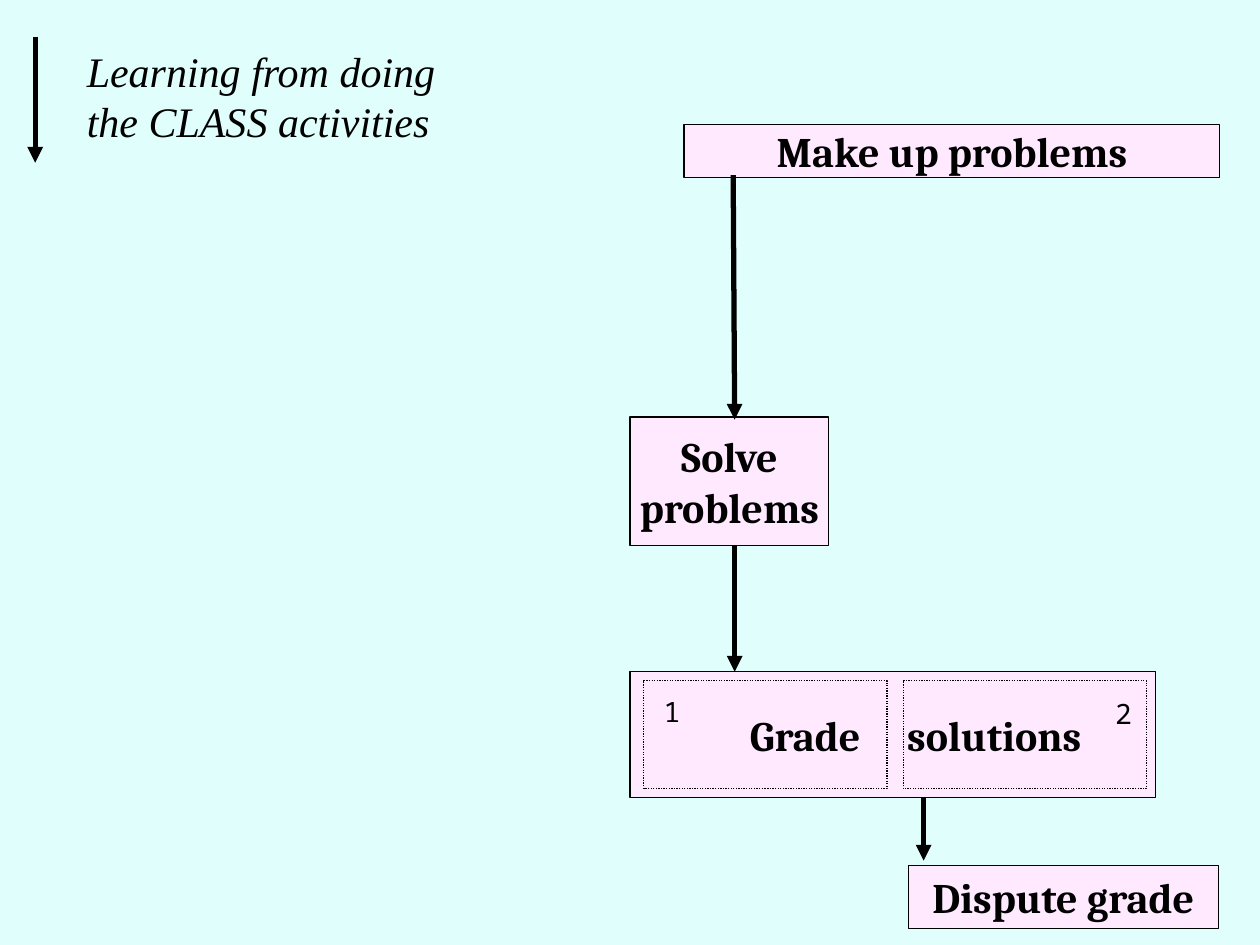
from lxml import etree
from pptx import Presentation
from pptx import util as u
from pptx.dml.color import RGBColor
from pptx.enum import dml, shapes, text
from pptx.oxml.ns import qn

PINK = "FFE9FF"
BLACK = "000000"


def colour(value):
    """Turn a hex string into a colour."""
    return RGBColor.from_string(value)


def lengths(*values):
    """Turn centimetres into lengths."""
    return [u.Cm(value) for value in values]


def add_span(para, words, size, font, bold=False, italic=False):
    """Add one formatted run to a paragraph."""
    span = para.add_run()
    span.text = words
    span.font.size = u.Pt(size)
    span.font.name = font
    span.font.bold = bold
    span.font.italic = italic
    span.font.color.rgb = colour(BLACK)


def add_box(page, place, fill=None, dash=None):
    """Add a thinly outlined rectangle."""
    box = page.shapes.add_shape(shapes.MSO_SHAPE.RECTANGLE, *lengths(*place))
    box.shadow.inherit = False
    if fill:
        box.fill.solid()
        box.fill.fore_color.rgb = colour(fill)
    else:
        box.fill.background()
    box.line.color.rgb = colour(BLACK)
    box.line.width = u.Pt(0.75)
    if dash:
        box.line.dash_style = dash
    return box


def add_step(page, place, lines):
    """Add a pink step box with centred bold lines."""
    box = add_box(page, place, PINK)
    frame = box.text_frame
    frame.word_wrap = False
    frame.vertical_anchor = text.MSO_ANCHOR.MIDDLE
    for index, words in enumerate(lines):
        para = frame.add_paragraph() if index else frame.paragraphs[0]
        para.alignment = text.PP_ALIGN.CENTER
        add_span(para, words, 24, "Cambria", bold=True)
    return box


def add_label(page, place, words, size, font, italic=False):
    """Add a wrapping text box."""
    box = page.shapes.add_textbox(*lengths(*place))
    box.text_frame.word_wrap = True
    add_span(box.text_frame.paragraphs[0], words, size, font, italic=italic)


def add_arrow(page, start, end):
    """Add a thick line with an arrowhead at its end."""
    arrow = page.shapes.add_connector(
        shapes.MSO_CONNECTOR.STRAIGHT, *lengths(*start, *end))
    arrow.line.color.rgb = colour(BLACK)
    arrow.line.width = u.Pt(3)
    etree.SubElement(arrow.line._get_or_add_ln(), qn("a:tailEnd"), type="triangle")
    etree.SubElement(arrow._element.spPr, qn("a:effectLst"))


def add_legend(page, left, top):
    """Add the key that explains the arrows."""
    add_arrow(page, (left, top), (left, top + 2.54))
    add_label(page, (left + 0.79, top + 0.05, 7.57, 2.31),
              "Learning from doing the CLASS activities", 24,
              "Times New Roman", italic=True)


def add_grading(page, left, top, width, height):
    """Add the grading step with its two numbered dotted halves."""
    box = add_step(page, (left, top, width, height), ["Grade\tsolutions"])
    box.text_frame.word_wrap = True
    box.text_frame.margin_left = u.Cm(2.42)
    para = box.text_frame.paragraphs[0]
    para.alignment = text.PP_ALIGN.LEFT
    tabs = etree.SubElement(para._p.get_or_add_pPr(), qn("a:tabLst"))
    etree.SubElement(tabs, qn("a:tab"), pos=str(u.Cm(3.17)), algn="l")
    for number, half, label, drop in (("1", 0.28, 0.43, 0.33),
                                      ("2", 5.51, 9.53, 0.38)):
        add_box(page, (left + half, top + 0.18, 4.9, 2.18),
                dash=dml.MSO_LINE.ROUND_DOT)
        add_label(page, (left + label, top + drop, 0.89, 0.94),
                  number, 16, "Noto Sans Mono")


def add_flow(page, left, top):
    """Add the steps from making up problems to disputing a grade."""
    add_step(page, (left + 1.09, top, 10.8, 1.07), ["Make up problems"])
    add_step(page, (left, top + 5.9, 4.01, 2.59), ["Solve", "problems"])
    add_grading(page, left, top + 11.03, 10.59, 2.54)
    add_step(page, (left + 5.61, top + 14.94, 6.25, 1.27), ["Dispute grade"])
    for start, end in (((2.08, 1.02), (2.11, 5.95)),
                       ((2.11, 8.49), (2.11, 11.03)),
                       ((5.92, 13.57), (5.92, 14.84))):
        add_arrow(page, (left + start[0], top + start[1]),
                  (left + end[0], top + end[1]))


def main():
    """Build and save the deck."""
    deck = Presentation()
    deck.slide_width, deck.slide_height = lengths(25.4, 19.05)
    page = deck.slides.add_slide(deck.slide_layouts[6])
    page.background.fill.solid()
    page.background.fill.fore_color.rgb = colour("E0FFFC")
    add_legend(page, 0.71, 0.74)
    add_flow(page, 12.7, 2.51)
    deck.save("out.pptx")


if __name__ == "__main__":
    main()
